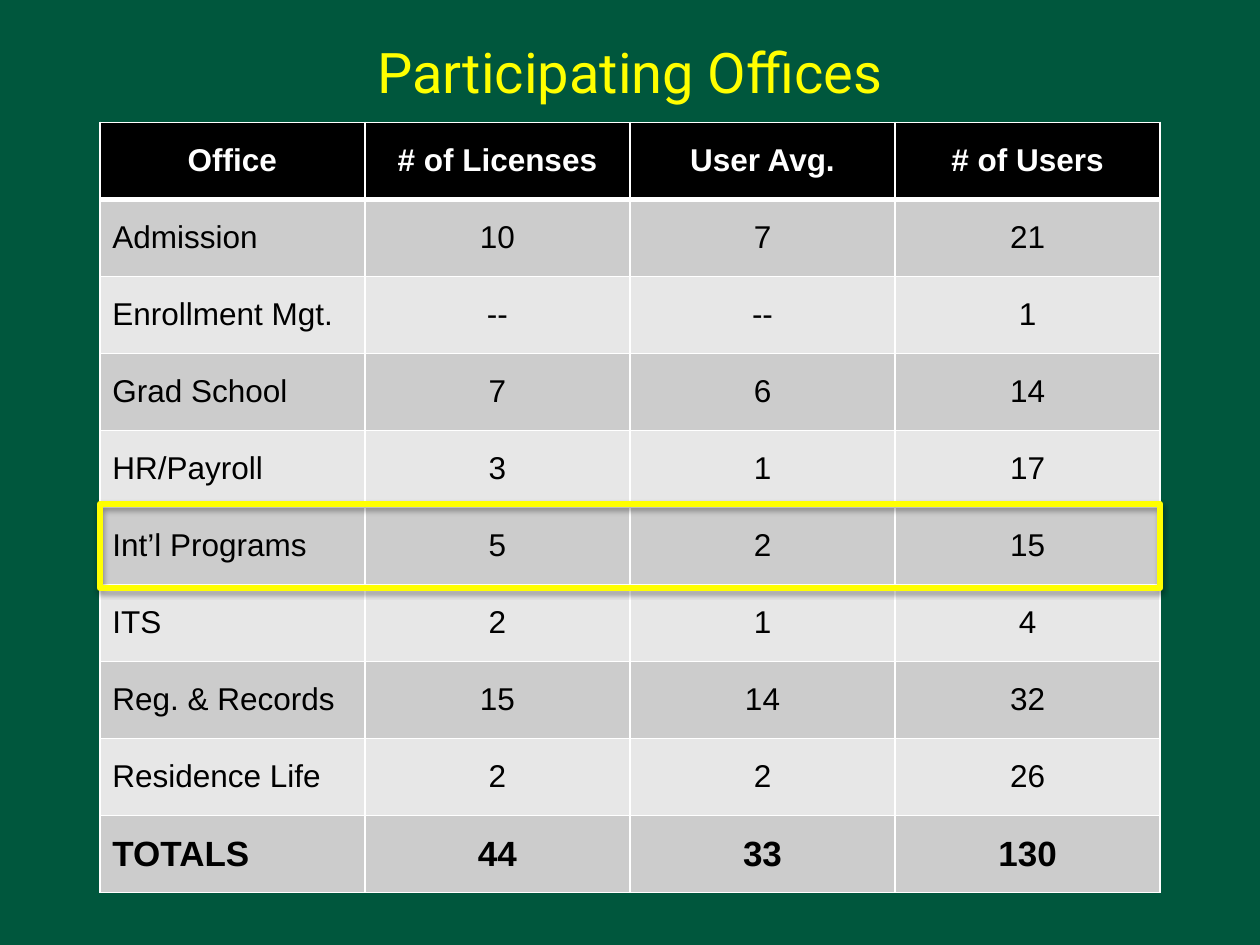
from lxml.etree import SubElement as add_element
from pptx import Presentation
from pptx.dml.color import RGBColor
from pptx.enum.shapes import MSO_SHAPE as Shape
from pptx.enum.text import MSO_ANCHOR as Anchor, PP_ALIGN as Align
from pptx.oxml.ns import qn
from pptx.util import Pt

GREEN = RGBColor(0x00, 0x57, 0x3D)
YELLOW = RGBColor(0xFF, 0xFF, 0x00)
WHITE = RGBColor(0xFF, 0xFF, 0xFF)
BLACK = RGBColor(0x00, 0x00, 0x00)
DARK_BAND = RGBColor(0xCC, 0xCC, 0xCC)
LIGHT_BAND = RGBColor(0xE7, 0xE7, 0xE7)

OFFICES = [
    ("Office", "# of Licenses", "User Avg.", "# of Users"),
    ("Admission", "10", "7", "21"),
    ("Enrollment Mgt.", "--", "--", "1"),
    ("Grad School", "7", "6", "14"),
    ("HR/Payroll", "3", "1", "17"),
    ("Int’l Programs", "5", "2", "15"),
    ("ITS", "2", "1", "4"),
    ("Reg. & Records", "15", "14", "32"),
    ("Residence Life", "2", "2", "26"),
    ("TOTALS", "44", "33", "130"),
]


def write(frame, text, size, font, color, align, bold=False):
    """Put one formatted run into the first paragraph of a text frame."""
    para = frame.paragraphs[0]
    para.alignment = align
    span = para.add_run()
    span.text = text
    span.font.size = Pt(size)
    span.font.name = font
    span.font.bold = bold
    span.font.color.rgb = color


def place_title(page, left, top, width, height):
    """Format the title placeholder within the given box."""
    title = page.shapes.title
    title.left, title.top = Pt(left), Pt(top)
    title.width, title.height = Pt(width), Pt(height)
    frame = title.text_frame
    frame.word_wrap = True
    frame.vertical_anchor = Anchor.MIDDLE
    write(frame, "Participating Offices", 32, "Roboto", YELLOW, Align.CENTER)


def draw_borders(cell, top, bottom):
    """Give a cell white borders, with its own top and bottom widths."""
    properties = cell._tc.get_or_add_tcPr()
    for side, width in (("L", 1), ("R", 1), ("T", top), ("B", bottom)):
        line = add_element(properties, qn(f"a:ln{side}"), w=str(Pt(width)))
        fill = add_element(line, qn("a:solidFill"))
        add_element(fill, qn("a:srgbClr"), val=str(WHITE))


def place_table(page, left, top, width, height):
    """Draw the banded table of offices, with a header and a totals row."""
    row_count, column_count = len(OFFICES), len(OFFICES[0])
    table = page.shapes.add_table(
        row_count, column_count, Pt(left), Pt(top), Pt(width), Pt(height)
    ).table
    for column in table.columns:
        column.width = Pt(width / column_count)
    for r, office in enumerate(OFFICES):
        table.rows[r].height = Pt(height / row_count)
        header, totals = r == 0, r == row_count - 1
        band = BLACK if header else DARK_BAND if r % 2 else LIGHT_BAND
        for c, text in enumerate(office):
            cell = table.cell(r, c)
            draw_borders(cell, 3 if r == 1 else 1, 3 if header else 1)
            cell.fill.solid()
            cell.fill.fore_color.rgb = band
            cell.vertical_anchor = Anchor.MIDDLE
            write(
                cell.text_frame, text, 20 if totals else 18, "Arial",
                WHITE if header else BLACK,
                Align.CENTER if header or c else Align.LEFT,
                header or totals,
            )


def place_highlight(page, left, top, width, height):
    """Frame one table row with a yellow outline and a soft shadow."""
    outline = page.shapes.add_shape(
        Shape.RECTANGLE, Pt(left), Pt(top), Pt(width), Pt(height)
    )
    outline.fill.background()
    outline.line.color.rgb = YELLOW
    outline.line.width = Pt(3.5)
    outline.shadow.inherit = False
    effects = outline._element.spPr.find(qn("a:effectLst"))
    shadow = add_element(
        effects, qn("a:outerShdw"), blurRad=str(Pt(3.1)), dist=str(Pt(1.8)),
        dir="5400000", rotWithShape="0",
    )
    color = add_element(shadow, qn("a:srgbClr"), val=str(BLACK))
    add_element(color, qn("a:alpha"), val="35000")


def main():
    """Build and save the deck."""
    deck = Presentation()
    deck.slide_width, deck.slide_height = Pt(720), Pt(540)
    page = deck.slides.add_slide(deck.slide_layouts[5])
    page.background.fill.solid()
    page.background.fill.fore_color.rgb = GREEN
    place_title(page, 36, 21.6, 648, 38)
    place_table(page, 57, 70, 606, 440)
    place_highlight(page, 57, 288, 606, 48)
    deck.save("out.pptx")


if __name__ == "__main__":
    main()
